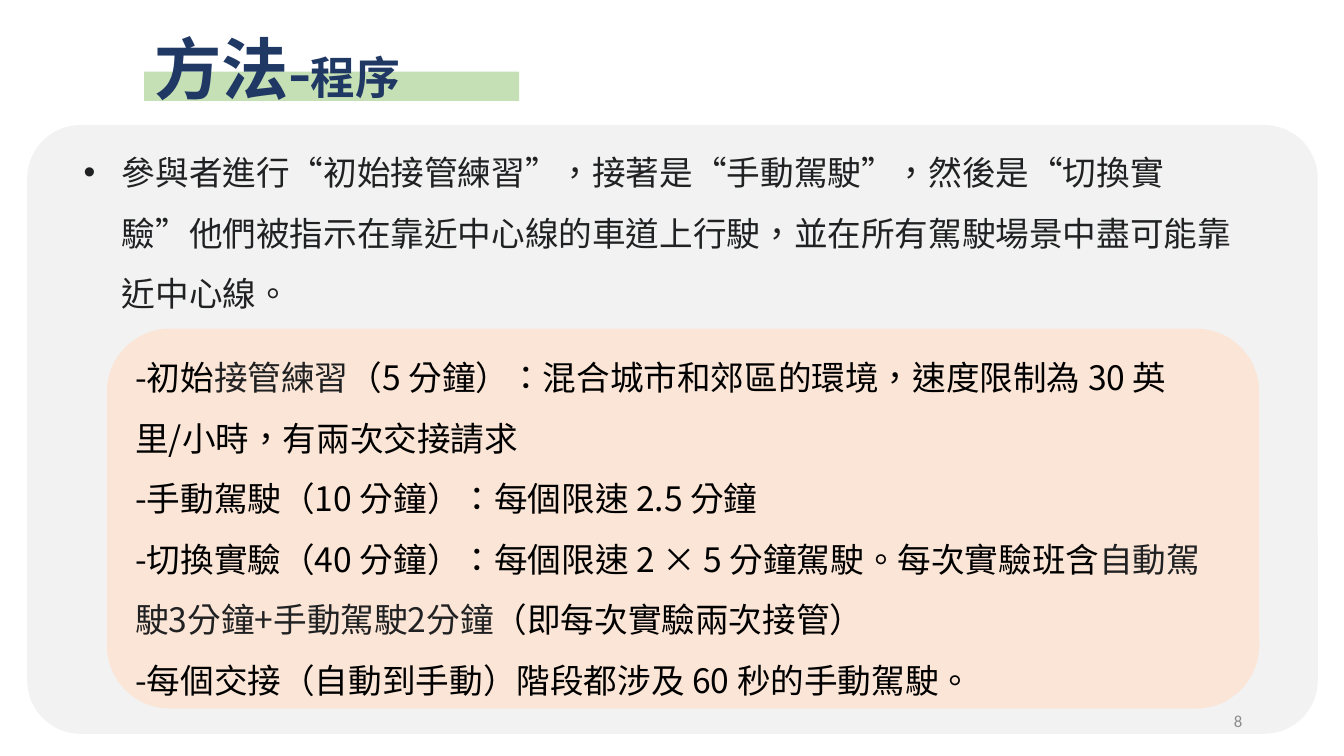
import pptx
import pptx.dml.color
import pptx.enum.shapes
import pptx.enum.text
import pptx.util
from lxml import etree
from pptx.oxml.ns import qn
from pptx.util import Inches

COLORS = {
    "panel": "F2F2F2",
    "highlight": "C5E0B4",
    "card": "FBE5D6",
    "title": "203864",
    "charcoal": "202122",
    "black": "000000",
    "page": "8C8C8C",
}
SC, TC = "Noto Sans CJK SC", "Noto Sans CJK TC"
SHAPES = pptx.enum.shapes.MSO_SHAPE
ALIGN = pptx.enum.text.PP_ALIGN
ANCHOR = pptx.enum.text.MSO_ANCHOR

# Run styles: latin font, East Asian font, colour, font attributes
STYLES = {
    "title": ("Times New Roman", TC, "title", {"size": 48, "bold": True}),
    "subtitle": ("Times New Roman", TC, "title", {"size": 32, "bold": True}),
    "body": (SC, SC, "charcoal", {"size": 24}),
    "step": (TC, TC, "black", {"size": 24}),
    "page": ("Calibri", TC, "page", {"size": 12}),
}

INTRO = ("參與者進行“初始接管練習”，接著是“手動駕駛”，然後是“切換實驗”"
         "他們被指示在靠近中心線的車道上行駛，並在所有駕駛場景中盡可能靠近中心線。")
STEPS = [
    [("-初始", "step"), ("接管練習", "body"),
     ("（5 分鐘）：混合城市和郊區的環境，速度限制為 30 英里/小時，有兩次交接請求", "step")],
    [("-手動駕駛（10 分鐘）：每個限速 2.5 分鐘", "step")],
    [("-切換實驗（40 分鐘）：每個限速 2 × 5 分鐘駕駛。每次實驗班含", "step"),
     ("自動駕駛3分鐘+手動駕駛2分鐘", "body"), ("（即每次實驗兩次接管）", "step")],
    [("-每個交接（自動到手動）階段都涉及 60 秒的手動駕駛。", "step")],
]


def rgb(name):
    return pptx.dml.color.RGBColor.from_string(COLORS[name])


def add_block(slide, kind, box, fill, adjustment=None):
    block = slide.shapes.add_shape(kind, *map(Inches, box))
    block.shadow.inherit = False
    block.fill.solid()
    block.fill.fore_color.rgb = rgb(fill)
    block.line.fill.background()
    if adjustment is not None:
        block.adjustments[0] = adjustment
    return block


def add_run(paragraph, text, style):
    latin, east_asian, color, formats = STYLES[style]
    run = paragraph.add_run()
    run.text = text
    for name, value in formats.items():
        setattr(run.font, name, pptx.util.Pt(value) if name == "size" else value)
    run.font.color.rgb = rgb(color)
    run.font.name = latin
    properties = run.font._element
    properties.set("lang", "zh-TW")
    etree.SubElement(properties, qn("a:ea")).set("typeface", east_asian)


def write(frame, paragraphs, anchor=ANCHOR.MIDDLE, align=ALIGN.LEFT,
          spacing=None, bullet=False):
    frame.word_wrap = True
    frame.vertical_anchor = anchor
    for index, runs in enumerate(paragraphs):
        paragraph = frame.add_paragraph() if index else frame.paragraphs[0]
        formats = {"alignment": align, "line_spacing": spacing}
        for name, value in formats.items():
            setattr(paragraph, name, value)
        if bullet:
            add_bullet(paragraph)
        for text, style in runs:
            add_run(paragraph, text, style)


def add_bullet(paragraph):
    properties = paragraph._p.get_or_add_pPr()
    for name, value in {"marL": Inches(0.38), "indent": Inches(-0.38)}.items():
        properties.set(name, str(value))
    etree.SubElement(properties, qn("a:buFont")).set("typeface", "Arial")
    etree.SubElement(properties, qn("a:buChar")).set("char", "•")


def add_text(slide, box, paragraphs, **layout):
    textbox = slide.shapes.add_textbox(*map(Inches, box))
    write(textbox.text_frame, paragraphs, **layout)


def main():
    deck = pptx.Presentation()
    deck.slide_width, deck.slide_height = Inches(13.33), Inches(7.5)
    slide = deck.slides.add_slide(deck.slide_layouts[6])

    # Background panel and page number
    add_block(slide, SHAPES.ROUNDED_RECTANGLE, (0.27, 1.24, 12.8, 6.04), "panel", 0.088)
    add_text(slide, (9.42, 6.95, 3, 0.4), [[("8", "page")]], align=ALIGN.RIGHT)

    # Title over its highlight bar
    add_block(slide, SHAPES.RECTANGLE, (1.43, 0.71, 3.72, 0.29), "highlight")
    add_text(slide, (1.43, 0.21, 7.02, 0.92),
             [[("方法-", "title"), ("程序", "subtitle")]])

    # Introduction
    add_text(slide, (0.73, 1.26, 11.69, 1.84), [[(INTRO, "body")]],
             anchor=ANCHOR.TOP, spacing=1.5, bullet=True)

    # Card with the steps of the procedure
    card = add_block(slide, SHAPES.ROUNDED_RECTANGLE, (1.06, 3.26, 11.43, 3.77), "card")
    write(card.text_frame, STEPS, spacing=1.5)

    deck.save("out.pptx")


if __name__ == "__main__":
    main()
